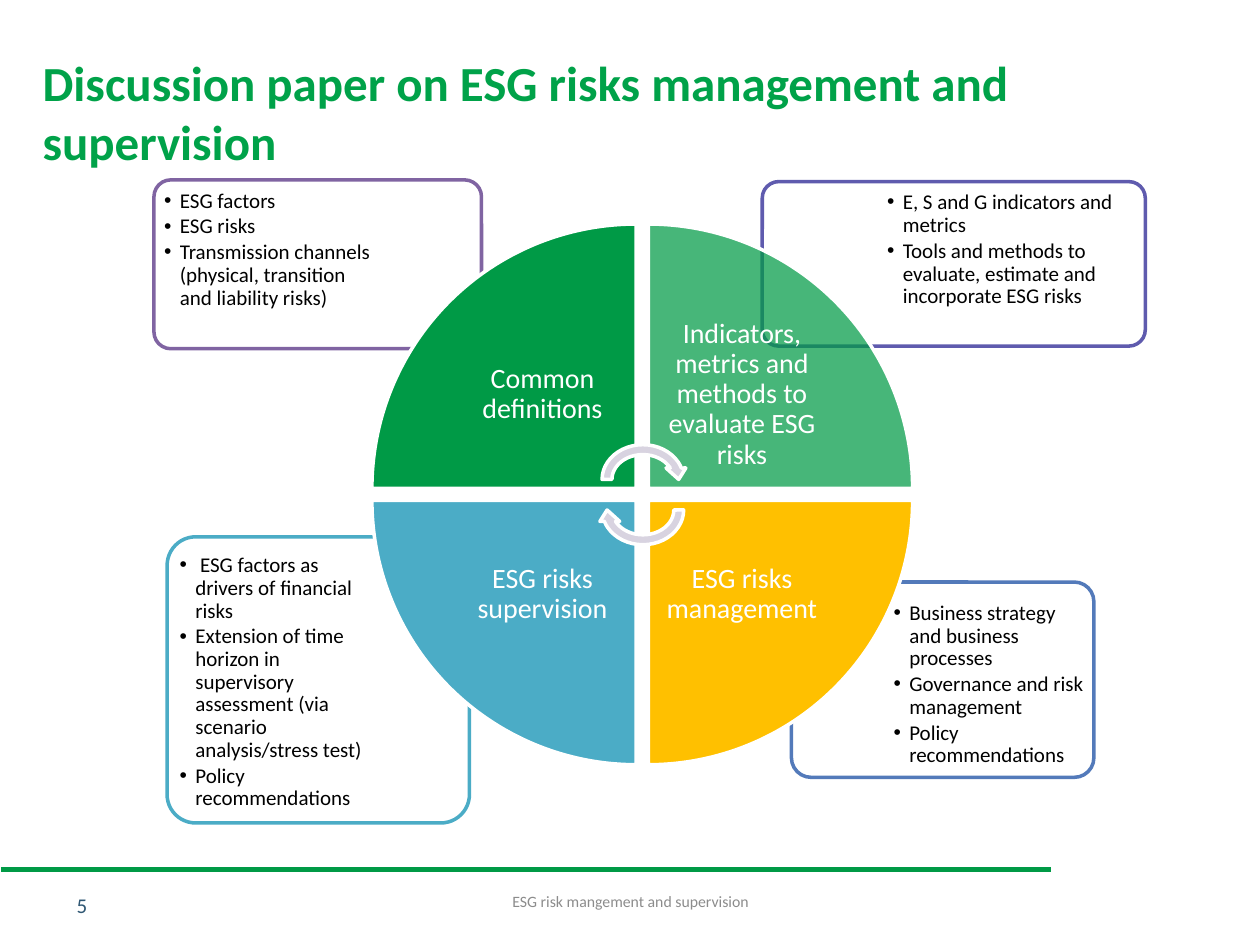
from dataclasses import dataclass

from lxml.etree import SubElement
from pptx import Presentation
from pptx.dml.color import RGBColor
from pptx.enum.shapes import MSO_CONNECTOR, MSO_SHAPE
from pptx.enum.text import MSO_ANCHOR, PP_ALIGN
from pptx.oxml.ns import qn
from pptx.util import Pt


@dataclass(frozen=True)
class Theme:
    font: str = "Calibri"
    title: str = "00A249"
    green: str = "009A46"
    teal: str = "4BACC6"
    amber: str = "FFC000"
    purple: str = "8064A2"
    indigo: str = "5F5BAE"
    blue: str = "537ABA"
    arrow: str = "D8D3E0"
    number: str = "2F5773"
    footer: str = "8C8C8C"
    white: str = "FFFFFF"
    black: str = "000000"
    title_size: float = 28
    label_size: float = 16
    body_size: float = 12
    footer_size: float = 9


class SlideBuilder:
    def __init__(self, s, theme):
        self.s = s
        self.theme = theme

    def shape(self, kind, box, fill, line, opacity=100, rotation=0):
        sp = self.s.shapes.add_shape(kind, *map(Pt, box))
        sp.shadow.inherit = False
        sp.rotation = rotation
        sp.fill.solid()
        sp.fill.fore_color.rgb = RGBColor.from_string(fill)
        if opacity < 100:
            color = sp._element.spPr.find(qn("a:solidFill"))[0]
            SubElement(color, qn("a:alpha"), val=str(opacity * 1000))
        sp.line.color.rgb = RGBColor.from_string(line)
        sp.line.width = Pt(2)
        return sp

    def text(self, box, lines, size, color, anchor=MSO_ANCHOR.MIDDLE, align=PP_ALIGN.LEFT,
             inset=None, spacing=None, after=0, bold=False, bullets=False):
        tf = self.s.shapes.add_textbox(*map(Pt, box)).text_frame
        tf.word_wrap = True
        tf.vertical_anchor = anchor
        if inset is not None:
            tf.margin_left = tf.margin_top = tf.margin_right = tf.margin_bottom = Pt(inset)
        tf.text = "\n".join(lines)
        for p in tf.paragraphs:
            p.alignment = align
            p.line_spacing = spacing
            p.space_after = Pt(after)
            if bullets:
                self.bullet(p)
            for r in p.runs:
                r.font.name = self.theme.font
                r.font.size = Pt(size)
                r.font.bold = bold
                r.font.color.rgb = RGBColor.from_string(color)

    def bullet(self, p, indent=9):
        pPr = p._p.get_or_add_pPr()
        pPr.set("marL", str(Pt(indent)))
        pPr.set("indent", str(-Pt(indent)))
        SubElement(pPr, qn("a:buFont"), typeface="Arial")
        SubElement(pPr, qn("a:buChar"), char="•")

    def card(self, box, color, text_box, lines, anchor):
        sp = self.shape(MSO_SHAPE.ROUNDED_RECTANGLE, box, self.theme.white, color, opacity=90)
        sp.adjustments[0] = 0.1
        self.text(text_box, lines, self.theme.body_size, self.theme.black, anchor,
                  inset=3.6, spacing=0.9, after=1.8, bullets=True)

    def wedge(self, col, row, rotation, fill, opacity, label):
        """Quarter of the disc, with its label box set against the disc centre."""
        left, top, size, pitch, label_size = 212.5, 128, 151, 158, 107
        x, y = left + col * pitch, top + row * pitch
        self.shape(MSO_SHAPE.PIE_WEDGE, (x, y, size, size), fill, self.theme.white,
                   opacity, rotation)
        shift = size - label_size
        box = (x + shift * (1 - col), y + shift * (1 - row), label_size, label_size)
        self.text(box, [label], self.theme.label_size, self.theme.white,
                  align=PP_ALIGN.CENTER, inset=9, spacing=0.9)

    def rule(self, x1, x2, y, color, width):
        line = self.s.shapes.add_connector(MSO_CONNECTOR.STRAIGHT, Pt(x1), Pt(y), Pt(x2), Pt(y))
        line.line.color.rgb = RGBColor.from_string(color)
        line.line.width = Pt(width)
        SubElement(line._element.spPr, qn("a:effectLst"))


def main():
    prs = Presentation()
    prs.slide_width, prs.slide_height = Pt(720), Pt(540)
    t = Theme()
    b = SlideBuilder(prs.slides.add_slide(prs.slide_layouts[6]), t)

    b.rule(0.5, 600.5, 497, t.green, 3)
    b.text((17.3, 33.3, 644.5, 61), ["Discussion paper on ESG risks management and supervision"],
           t.title_size, t.title, bold=True)
    b.text((36.7, 502.5, 168, 29), ["5"], t.body_size, t.number)

    cards = [
        ((452.3, 332.6, 172.8, 111.6), t.blue, (507, 363, 116, 79), MSO_ANCHOR.BOTTOM,
         ["Business strategy and business processes", "Governance and risk management",
          "Policy recommendations"]),
        ((95.5, 306.8, 172.8, 163.5), t.teal, (99, 351.4, 113.8, 115.2), MSO_ANCHOR.BOTTOM,
         [" ESG factors as drivers of financial risks",
          "Extension of time horizon in supervisory assessment (via scenario analysis/stress test)",
          "Policy recommendations"]),
        ((435.6, 103.8, 218.9, 94), t.indigo, (503.3, 106, 149, 66.2), MSO_ANCHOR.TOP,
         ["E, S and G indicators and metrics",
          "Tools and methods to evaluate, estimate and incorporate ESG risks"]),
        ((88, 102.8, 187.2, 96.5), t.purple, (90.2, 105, 126.7, 67.7), MSO_ANCHOR.TOP,
         ["ESG factors", "ESG risks",
          "Transmission channels (physical, transition and liability risks)"]),
    ]
    for box, color, text_box, anchor, lines in cards:
        b.card(box, color, text_box, lines, anchor)

    wedges = [
        (0, 0, t.green, 100, "Common definitions"),
        (1, 0, t.green, 72, "Indicators, metrics and methods to evaluate ESG risks"),
        (1, 1, t.amber, 100, "ESG risks management"),
        (0, 1, t.teal, 100, "ESG risks supervision"),
    ]
    for i, (col, row, fill, opacity, label) in enumerate(wedges):
        b.wedge(col, row, 90 * i, fill, opacity, label)

    for y, rotation in ((251.3, 0), (268.7, 180)):
        b.shape(MSO_SHAPE.CIRCULAR_ARROW, (341.2, y, 52.3, 45.4), t.arrow, t.white,
                rotation=rotation)

    b.text((246.2, 500.4, 228.2, 29), ["ESG risk mangement and supervision"],
           t.footer_size, t.footer, align=PP_ALIGN.CENTER)
    prs.save("out.pptx")


if __name__ == "__main__":
    main()
